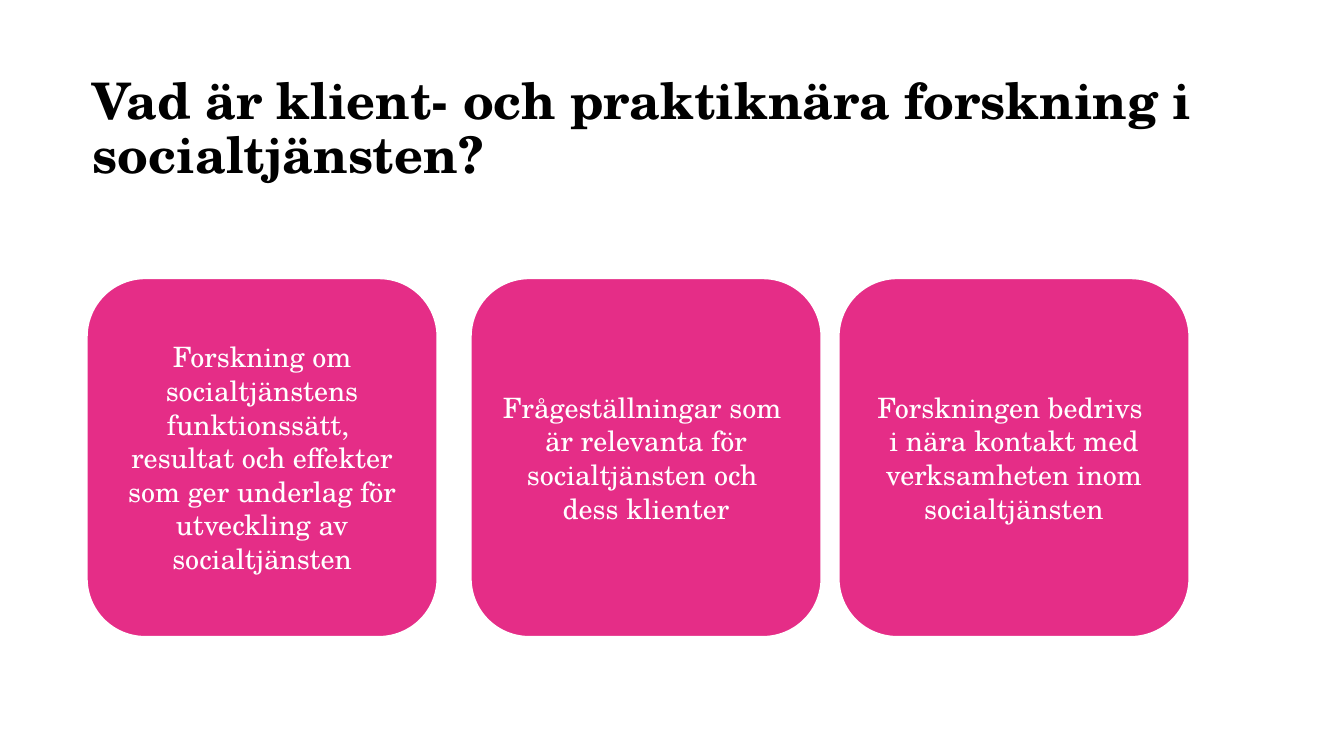
from pptx import Presentation
from pptx.dml.color import RGBColor
from pptx.enum.shapes import MSO_SHAPE
from pptx.enum.text import MSO_ANCHOR, MSO_AUTO_SIZE, PP_ALIGN
from pptx.util import Pt

ROUNDED = MSO_SHAPE.ROUNDED_RECTANGLE
TOP, MIDDLE = MSO_ANCHOR.TOP, MSO_ANCHOR.MIDDLE
NO_AUTOFIT = MSO_AUTO_SIZE.NONE
LEFT, CENTER = PP_ALIGN.LEFT, PP_ALIGN.CENTER
TITLE_ONLY = 5

CARD_TOP, CARD_WIDTH, CARD_HEIGHT = 198.7, 250.6, 256.3
CARDS = [
    (61.9, ["Forskning om socialtjänstens funktionssätt, ",
            "resultat och effekter som ger underlag för utveckling av socialtjänsten"]),
    (336.2, ["Frågeställningar som ",
             "är relevanta för socialtjänsten och ",
             "dess klienter"]),
    (599, ["Forskningen bedrivs ",
           "i nära kontakt med verksamheten inom socialtjänsten"]),
]


def color(value):
    return RGBColor.from_string(value)


class SlideBuilder:
    font_name = "TeX Gyre Schola"
    ink, paper, accent = "000000", "FFFFFF", "E52D87"

    def __init__(self, slide):
        self.slide = slide

    def add_run(self, paragraph, text, size, ink, bold=False):
        run = paragraph.add_run()
        run.text = text
        run.font.name = self.font_name
        run.font.size = Pt(size)
        run.font.bold = bold
        run.font.color.rgb = color(ink)

    def title(self, text, left, top, width, height):
        shape = self.slide.shapes.title
        shape.left, shape.top = Pt(left), Pt(top)
        shape.width, shape.height = Pt(width), Pt(height)
        frame = shape.text_frame
        frame.auto_size = NO_AUTOFIT
        frame.word_wrap = True
        frame.vertical_anchor = TOP
        frame.margin_left = frame.margin_right = Pt(0)
        frame.margin_top = frame.margin_bottom = Pt(0)
        paragraph = frame.paragraphs[0]
        paragraph.alignment = LEFT
        paragraph.line_spacing = 0.9
        self.add_run(paragraph, text, 36, self.ink, bold=True)

    def card(self, lines, left, top, width, height):
        shape = self.slide.shapes.add_shape(
            ROUNDED, Pt(left), Pt(top), Pt(width), Pt(height))
        shape.shadow.inherit = False
        shape.fill.solid()
        shape.fill.fore_color.rgb = color(self.accent)
        shape.line.color.rgb = color(self.paper)
        shape.line.width = Pt(1.5)
        frame = shape.text_frame
        frame.word_wrap = True
        frame.vertical_anchor = MIDDLE
        paragraph = frame.paragraphs[0]
        paragraph.alignment = CENTER
        for index, line in enumerate(lines):
            if index:
                paragraph.add_line_break()
            self.add_run(paragraph, line, 20, self.paper)


def main():
    presentation = Presentation()
    presentation.slide_width, presentation.slide_height = Pt(960), Pt(540)
    slide = presentation.slides.add_slide(presentation.slide_layouts[TITLE_ONLY])
    builder = SlideBuilder(slide)
    builder.title("Vad är klient- och praktiknära forskning i socialtjänsten?",
                  66.2, 54, 828, 79.2)
    for left, lines in CARDS:
        builder.card(lines, left, CARD_TOP, CARD_WIDTH, CARD_HEIGHT)
    presentation.save("out.pptx")


if __name__ == "__main__":
    main()
